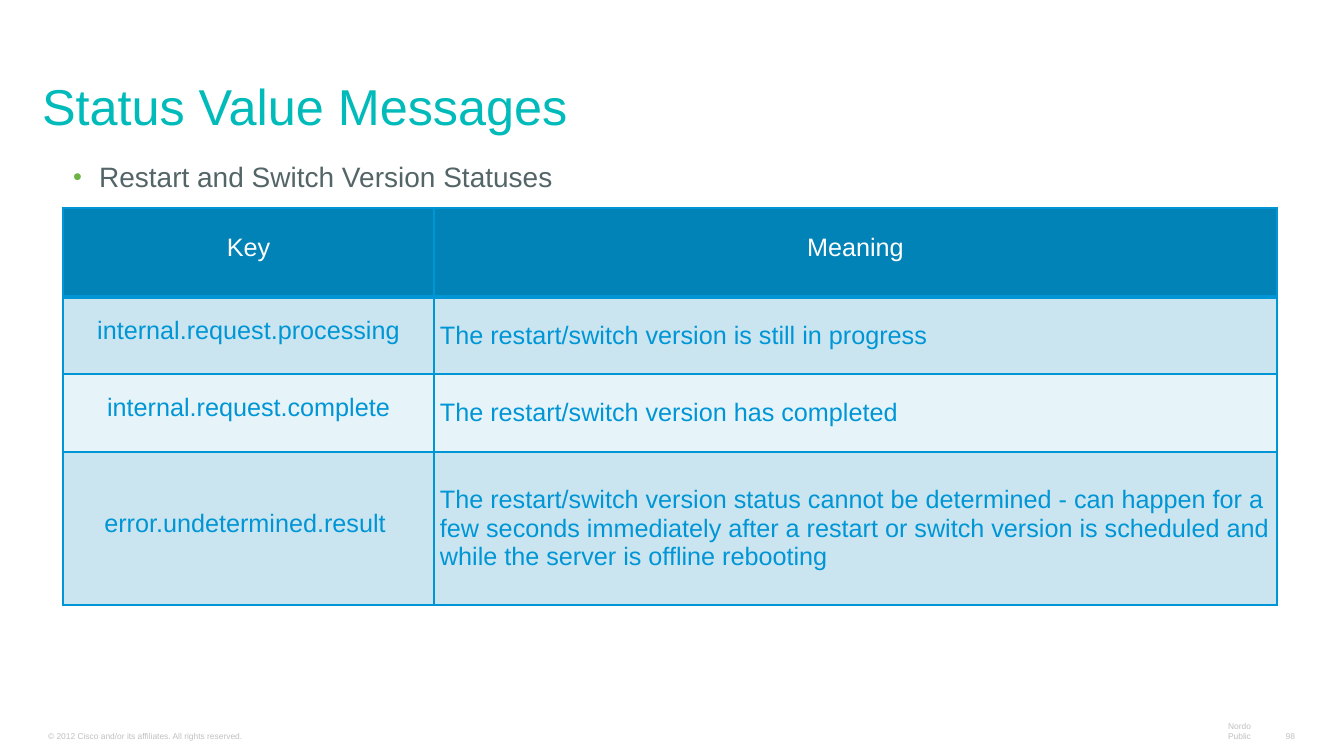
from lxml.etree import SubElement
from pptx import Presentation
from pptx.dml.color import RGBColor
from pptx.enum.text import MSO_ANCHOR, MSO_AUTO_SIZE, PP_ALIGN
from pptx.oxml import parse_xml
from pptx.oxml.ns import qn
from pptx.util import Pt

# Content, lengths in px
TITLE = "Status Value Messages"
TOPIC = "Restart and Switch Version Statuses"
STATUSES = [
    ("Key", "Meaning"),
    ("internal.request.processing", "The restart/switch version is still in progress"),
    ("internal.request.complete", "The restart/switch version has completed"),
    ("error.undetermined.result ",
     "The restart/switch version status cannot be determined - can happen for a "
     "few seconds immediately after a restart or switch version is scheduled and "
     "while the server is offline rebooting"),
]
FOOTERS = [
    ("© 2012 Cisco and/or its affiliates. All rights reserved.", 39, 503, PP_ALIGN.LEFT),
    ("Nordo Public", 1194, 66, PP_ALIGN.RIGHT),
    ("98", 1276, 28, PP_ALIGN.RIGHT),
]
COLUMN_WIDTHS = [371, 843]
ROW_HEIGHTS = [89, 77, 78, 153]
COLORS = {
    "title": "01BBBB", "topic": "546568", "bullet": "6DB344", "footer": "C0C0C0",
    "header": "0183B7", "header text": "FFFFFF", "accent": "0096D6",
    "odd row": "CAE5F0", "even row": "E6F3F8",
}
SLIDE_WIDTH, SLIDE_HEIGHT = 1344, 756
EMU_PER_PX = 914400 / 100.8
DRAWING_NS = "http://schemas.openxmlformats.org/drawingml/2006/main"


def px(length):
    return round(length * EMU_PER_PX)


def color(name):
    return RGBColor.from_string(COLORS[name])


def place(shape, left, top, width, height):
    shape.left, shape.top, shape.width, shape.height = map(px, (left, top, width, height))


def set_insets(target, side, end):
    target.margin_left = target.margin_right = px(side)
    target.margin_top = target.margin_bottom = px(end)


def write(paragraph, text, size, color_name, align=PP_ALIGN.LEFT, spacing=None):
    paragraph.alignment = align
    paragraph.space_before = Pt(0)
    if spacing:
        paragraph.line_spacing = spacing
    run = paragraph.add_run()
    run.text = text
    run.font.name = "Arial"
    run.font.size = Pt(size)
    run.font.bold = False
    run.font.color.rgb = color(color_name)


def add_borders(cell, widths):
    properties = cell._tc.get_or_add_tcPr()
    for position, (side, points) in enumerate(zip("LRTB", widths)):
        properties.insert(position, parse_xml(
            f'<a:ln{side} xmlns:a="{DRAWING_NS}" w="{Pt(points)}"><a:solidFill>'
            f'<a:srgbClr val="{COLORS["accent"]}"/></a:solidFill></a:ln{side}>'))


prs = Presentation()
prs.slide_width, prs.slide_height = px(SLIDE_WIDTH), px(SLIDE_HEIGHT)
slide = prs.slides.add_slide(prs.slide_layouts[1])

# Title
title = slide.shapes.title
place(title, 33, 47, 1262, 93)
title.text_frame.auto_size = MSO_AUTO_SIZE.NONE
title.text_frame.vertical_anchor = MSO_ANCHOR.BOTTOM
set_insets(title.text_frame, 9, 5)
write(title.text_frame.paragraphs[0], TITLE, 36, "title", spacing=0.8)

# Bulleted topic
topic = slide.placeholders[1]
place(topic, 63, 152, 1214, 51)
topic.text_frame.auto_size = MSO_AUTO_SIZE.NONE
topic.text_frame.vertical_anchor = MSO_ANCHOR.MIDDLE
topic_line = topic.text_frame.paragraphs[0]
bullet = topic_line._p.get_or_add_pPr()
bullet.set("marL", str(px(26)))
bullet.set("indent", str(-px(26)))
SubElement(SubElement(bullet, qn("a:buClr")), qn("a:srgbClr"), val=COLORS["bullet"])
SubElement(bullet, qn("a:buSzPct"), val="90000")
SubElement(bullet, qn("a:buFont"), typeface="Arial")
SubElement(bullet, qn("a:buChar"), char="•")
write(topic_line, TOPIC, 20, "topic", spacing=0.95)

# Status table
statuses = slide.shapes.add_table(
    len(ROW_HEIGHTS), len(COLUMN_WIDTHS), px(63), px(208),
    px(sum(COLUMN_WIDTHS)), px(sum(ROW_HEIGHTS))).table
for column, width in zip(statuses.columns, COLUMN_WIDTHS):
    column.width = px(width)
for row, height in zip(statuses.rows, ROW_HEIGHTS):
    row.height = px(height)
for r, entries in enumerate(STATUSES):
    fill = "header" if r == 0 else "odd row" if r % 2 else "even row"
    for c, text in enumerate(entries):
        cell = statuses.cell(r, c)
        cell.vertical_anchor = MSO_ANCHOR.MIDDLE
        set_insets(cell, 6, 4)
        cell.fill.solid()
        cell.fill.fore_color.rgb = color(fill)
        add_borders(cell, (1, 1, 3 if r == 1 else 1, 3 if r == 0 else 1))
        centred = r == 0 or c == 0
        write(cell.text_frame.paragraphs[0], text, 18,
              "header text" if r == 0 else "accent",
              PP_ALIGN.CENTER if centred else PP_ALIGN.LEFT,
              Pt(13) if centred else None)

# Footer
for text, left, width, align in FOOTERS:
    footer = slide.shapes.add_textbox(px(left), px(726), px(width), px(19)).text_frame
    footer.word_wrap = align == PP_ALIGN.LEFT
    footer.vertical_anchor = MSO_ANCHOR.BOTTOM
    set_insets(footer, 9, 4)
    write(footer.paragraphs[0], text, 6, "footer", align)

prs.save("out.pptx")
